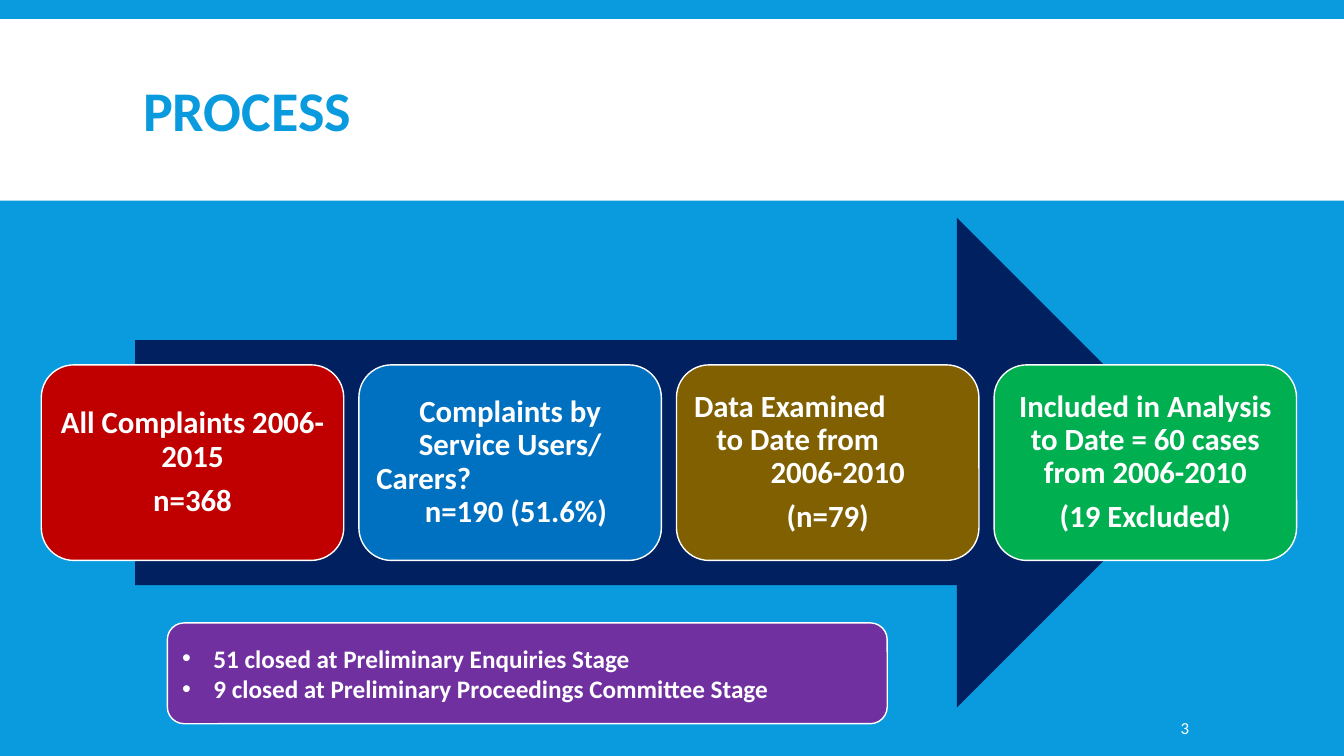
"""Build the complaints process slide with its four stages on an arrow."""
from lxml import etree
from pptx import Presentation
from pptx.dml.color import RGBColor
from pptx.enum import shapes, text
from pptx.oxml import ns
from pptx.util import Inches, Pt

FONT = "Calibri"
COLOURS = {
    "sky": "099BDD", "white": "FFFFFF", "navy": "002060", "red": "C00000",
    "blue": "0070C0", "brown": "806000", "green": "00B050", "purple": "7030A0",
}
TITLE = "PROCESS"
SLIDE_NUMBER = "3"
CENTRED = None
STAGES = [
    ("red", [("All Complaints 2006-2015", CENTRED, 0), ("n=368", CENTRED, 7.7)]),
    ("blue", [("Complaints by", CENTRED, 0), ("Service Users/", CENTRED, 0),
              ("Carers?", 0, 0), ("n=190 (51.6%)", 0.48, 0)]),
    ("brown", [("Data Examined", 0, 0), ("to Date from", 0.22, 0),
               ("2006-2010", 0.76, 0), ("(n=79)", CENTRED, 7.7)]),
    ("green", [("Included in Analysis to Date = 60 cases from 2006-2010", CENTRED, 0),
               ("(19 Excluded)", CENTRED, 7.7)]),
]
CLOSED = [
    "51 closed at Preliminary Enquiries Stage",
    "9 closed at Preliminary Proceedings Committee Stage",
]
STAGE_LEFT, STAGE_TOP, STAGE_WIDTH, STAGE_HEIGHT, STAGE_PITCH = 0.41, 3.62, 3, 1.94, 3.15
BULLET_INDENT = 0.31


def colour(name):
    return RGBColor.from_string(COLOURS[name])


def add_run(paragraph, wording, size, name="white", bold=True):
    run = paragraph.add_run()
    run.text = wording
    run.font.name, run.font.size, run.font.bold = FONT, Pt(size), bold
    run.font.color.rgb = colour(name)
    return run


def add_block(slide, kind, box, fill, outlined=False):
    shape = slide.shapes.add_shape(kind, *map(Inches, box))
    shape.shadow.inherit = False
    shape.fill.solid()
    shape.fill.fore_color.rgb = colour(fill)
    if outlined:
        shape.line.color.rgb = colour("white")
        shape.line.width = Pt(1)
    else:
        shape.line.fill.background()
    shape.text_frame.word_wrap = True
    shape.text_frame.vertical_anchor = text.MSO_ANCHOR.MIDDLE
    return shape


def next_paragraph(frame, index):
    return frame.add_paragraph() if index else frame.paragraphs[0]


def add_title(slide):
    title = slide.shapes.title
    title.left, title.top, title.width, title.height = map(Inches, (1.32, 0.31, 10.7, 1.65))
    title.text_frame.vertical_anchor = text.MSO_ANCHOR.MIDDLE
    paragraph = title.text_frame.paragraphs[0]
    paragraph.alignment = text.PP_ALIGN.LEFT
    paragraph.line_spacing = 0.85
    add_run(paragraph, TITLE, 40, "sky")


def add_stage(slide, position, fill, lines):
    left = STAGE_LEFT + position * STAGE_PITCH
    shape = add_block(slide, shapes.MSO_SHAPE.ROUNDED_RECTANGLE,
                      (left, STAGE_TOP, STAGE_WIDTH, STAGE_HEIGHT), fill, outlined=True)
    frame = shape.text_frame
    frame.margin_left = frame.margin_right = Inches(0.08)
    for index, (wording, indent, before) in enumerate(lines):
        paragraph = next_paragraph(frame, index)
        paragraph.line_spacing = 0.9
        paragraph.space_before = Pt(before)
        if indent is CENTRED:
            paragraph.alignment = text.PP_ALIGN.CENTER
        else:
            paragraph.alignment = text.PP_ALIGN.LEFT
            paragraph._p.get_or_add_pPr().set("marL", str(Inches(indent)))
        add_run(paragraph, wording, 22)


def add_closed_cases(slide):
    shape = add_block(slide, shapes.MSO_SHAPE.ROUNDED_RECTANGLE,
                      (1.66, 6.18, 7.14, 1), "purple", outlined=True)
    for index, wording in enumerate(CLOSED):
        paragraph = next_paragraph(shape.text_frame, index)
        paragraph.alignment = text.PP_ALIGN.LEFT
        properties = paragraph._p.get_or_add_pPr()
        properties.set("marL", str(Inches(BULLET_INDENT)))
        properties.set("indent", str(-Inches(BULLET_INDENT)))
        etree.SubElement(properties, ns.qn("a:buFont"), typeface="Arial")
        etree.SubElement(properties, ns.qn("a:buChar"), char="•")
        add_run(paragraph, wording, 18)


def add_slide_number(slide):
    box = slide.shapes.add_textbox(*map(Inches, (11.66, 7.02, 1.03, 0.4)))
    frame = box.text_frame
    frame.word_wrap = True
    frame.vertical_anchor = text.MSO_ANCHOR.MIDDLE
    frame.margin_left = Inches(0.05)
    paragraph = frame.paragraphs[0]
    run = add_run(paragraph, SLIDE_NUMBER, 12, bold=False)
    field = etree.SubElement(paragraph._p, ns.qn("a:fld"), type="slidenum",
                             id="{B6F15528-21DE-4FAA-801E-634DDDAF4B2B}")
    field.extend(list(run._r))
    paragraph._p.remove(run._r)


def main():
    presentation = Presentation()
    presentation.slide_width, presentation.slide_height = Inches(13.33), Inches(7.5)
    presentation.element.set("firstSlideNum", SLIDE_NUMBER)
    slide = presentation.slides.add_slide(presentation.slide_layouts[5])
    slide.background.fill.solid()
    slide.background.fill.fore_color.rgb = colour("sky")

    band = add_block(slide, shapes.MSO_SHAPE.RECTANGLE, (0, 0.19, 13.33, 1.8), "white")
    slide.shapes.title.element.addprevious(band.element)
    add_title(slide)
    add_slide_number(slide)
    add_block(slide, shapes.MSO_SHAPE.RIGHT_ARROW, (1.34, 2.16, 10.58, 4.86), "navy")
    for position, (fill, lines) in enumerate(STAGES):
        add_stage(slide, position, fill, lines)
    add_closed_cases(slide)
    presentation.save("out.pptx")


if __name__ == "__main__":
    main()
